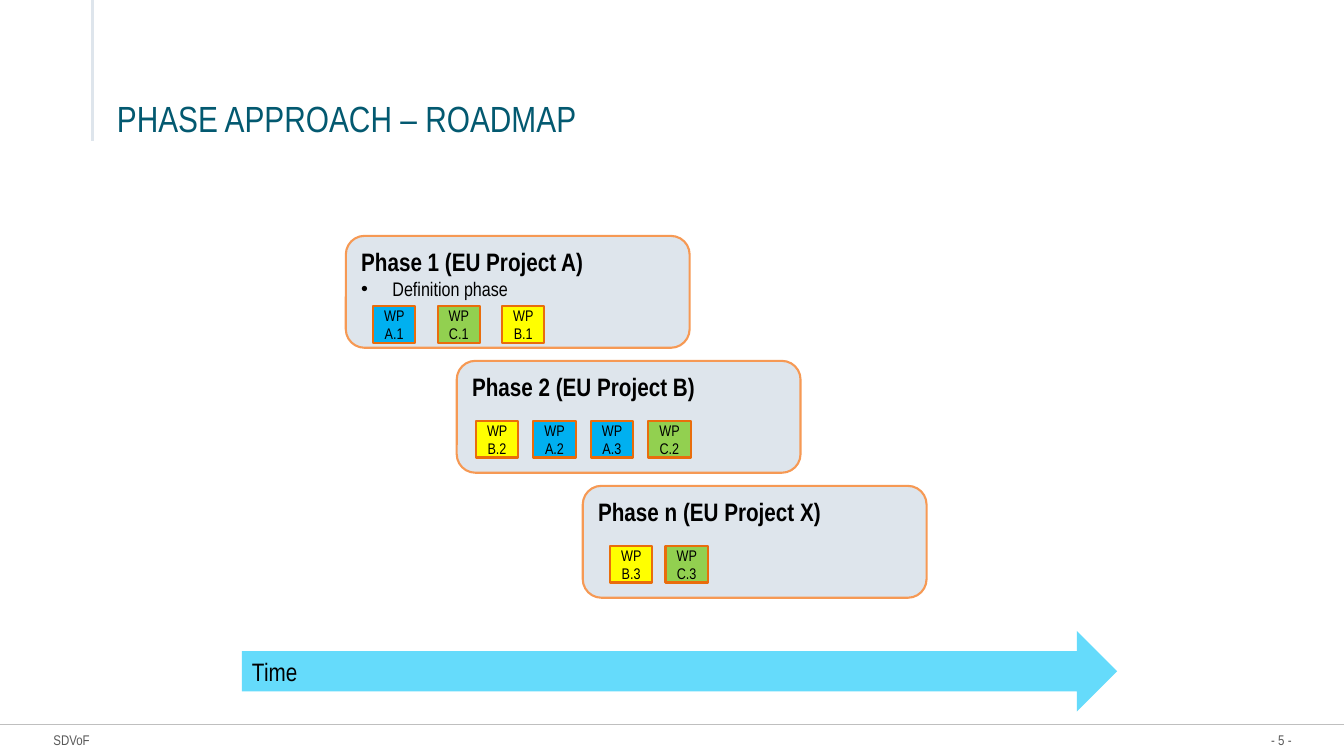
from lxml import etree
from pptx import Presentation
from pptx.dml.color import RGBColor
from pptx.enum.shapes import MSO_CONNECTOR, MSO_SHAPE as SHAPE
from pptx.enum.text import MSO_ANCHOR as ANCHOR, MSO_AUTO_SIZE as FIT, PP_ALIGN as ALIGN
from pptx.oxml.ns import qn
from pptx.util import Inches, Pt

TITLE = "PHASE APPROACH – ROADMAP"
FOOTER, PAGE = "SDVoF", "- 5 -"
TIME = "Time"

# heading, bullet, left edge, (inset, drop, pitch) of its packages, packages
PHASES = [
    ("Phase 1 (EU Project A)", "Definition phase", 3.43, (0.27, 0.7, 0.64),
     ["A.1", "C.1", "B.1"]),
    ("Phase 2 (EU Project B)", None, 4.53, (0.19, 0.6, 0.57),
     ["B.2", "A.2", "A.3", "C.2"]),
    ("Phase n (EU Project X)", None, 5.78, (0.27, 0.6, 0.55),
     ["B.3", "C.3"]),
]
PACKAGE_FILL = {"A": "00B0F0", "B": "FFFF00", "C": "92D050"}

WIDTH, HEIGHT = 13.33, 7.5
PHASE_TOP, PHASE_PITCH = 2.34, 1.24
PHASE_SIZE = (3.41, 1.11)
PACKAGE_SIZE = (0.42, 0.36)
FOOTER_TOP, FOOTER_HEIGHT = 7.26, 0.17
FONT = "Arial Narrow"


def color(value):
    return RGBColor.from_string(value)


def add_text(tf, text, size=18, fill="000000", bold=False, align=ALIGN.LEFT,
             bullet=False, new=False):
    """Write one paragraph, in the first one unless new is set."""
    p = tf.add_paragraph() if new else tf.paragraphs[0]
    p.alignment = align
    if bullet:
        pPr = p._p.get_or_add_pPr()
        pPr.set("marL", str(Inches(0.31)))
        pPr.set("indent", str(Inches(-0.31)))
        etree.SubElement(pPr, qn("a:buFont")).set("typeface", "Arial")
        etree.SubElement(pPr, qn("a:buChar")).set("char", "•")
    r = p.add_run()
    r.text = text
    r.font.name, r.font.size, r.font.bold = FONT, Pt(size), bold
    r.font.color.rgb = color(fill)


def set_frame(tf, anchor, left=0.1, top=0.05, right=0.1, bottom=0.05, wrap=True):
    tf.auto_size, tf.word_wrap, tf.vertical_anchor = FIT.NONE, wrap, anchor
    tf.margin_left, tf.margin_top = Inches(left), Inches(top)
    tf.margin_right, tf.margin_bottom = Inches(right), Inches(bottom)


def add_block(s, kind, left, top, size, fill, line=None):
    sp = s.shapes.add_shape(kind, *map(Inches, (left, top, *size)))
    sp.shadow.inherit = False
    sp.fill.solid()
    sp.fill.fore_color.rgb = color(fill)
    if line:
        sp.line.color.rgb = color(line)
        sp.line.width = Pt(1.5)
    else:
        sp.line.fill.background()
    set_frame(sp.text_frame, ANCHOR.TOP)
    return sp.text_frame


def add_rule(s, x1, y1, x2, y2, fill, width):
    line = s.shapes.add_connector(MSO_CONNECTOR.STRAIGHT, *map(Inches, (x1, y1, x2, y2)))
    line.line.color.rgb = color(fill)
    line.line.width = Pt(width)
    etree.SubElement(line._element.spPr, qn("a:effectLst"))


def add_footer(s, text, left, width, align):
    box = s.shapes.add_textbox(*map(Inches, (left, FOOTER_TOP, width, FOOTER_HEIGHT)))
    set_frame(box.text_frame, ANCHOR.MIDDLE, 0, 0, 0, 0, wrap=False)
    add_text(box.text_frame, text, size=10, fill="595959", align=align)


def add_title(s):
    title = s.shapes.title
    title.left, title.top, title.width, title.height = map(Inches, (1.06, 0.53, 11.5, 0.86))
    set_frame(title.text_frame, ANCHOR.BOTTOM, bottom=0)
    add_text(title.text_frame, TITLE, size=26, fill="035970")


def add_phase(s, row, heading, bullet, left, layout, packages):
    top = PHASE_TOP + row * PHASE_PITCH
    tf = add_block(s, SHAPE.ROUNDED_RECTANGLE, left, top, PHASE_SIZE, "DEE5EC", "F69954")
    add_text(tf, heading, bold=True)
    if bullet:
        add_text(tf, bullet, size=14, bullet=True, new=True)
    inset, drop, pitch = layout
    for col, name in enumerate(packages):
        tf = add_block(s, SHAPE.RECTANGLE, left + inset + col * pitch, top + drop,
                       PACKAGE_SIZE, PACKAGE_FILL[name[0]], "E96D0C")
        set_frame(tf, ANCHOR.MIDDLE, left=0.05, right=0.05)
        add_text(tf, f"WP {name}", size=11, align=ALIGN.CENTER)


def main():
    prs = Presentation()
    prs.slide_width, prs.slide_height = Inches(WIDTH), Inches(HEIGHT)
    s = prs.slides.add_slide(prs.slide_layouts[5])
    add_rule(s, 0, 7.19, WIDTH, 7.19, "BFBFBF", 1)
    add_rule(s, 0.92, 0, 0.92, 1.4, "DEE5EC", 2.25)
    add_footer(s, FOOTER, 0.53, 0.38, ALIGN.LEFT)
    add_footer(s, PAGE, 12.4, 0.41, ALIGN.RIGHT)
    add_title(s)
    for row, phase in enumerate(PHASES):
        add_phase(s, row, *phase)
    add_text(add_block(s, SHAPE.RIGHT_ARROW, 2.4, 6.26, (8.68, 0.8), "65DBFB"), TIME)
    prs.save("out.pptx")


if __name__ == "__main__":
    main()
